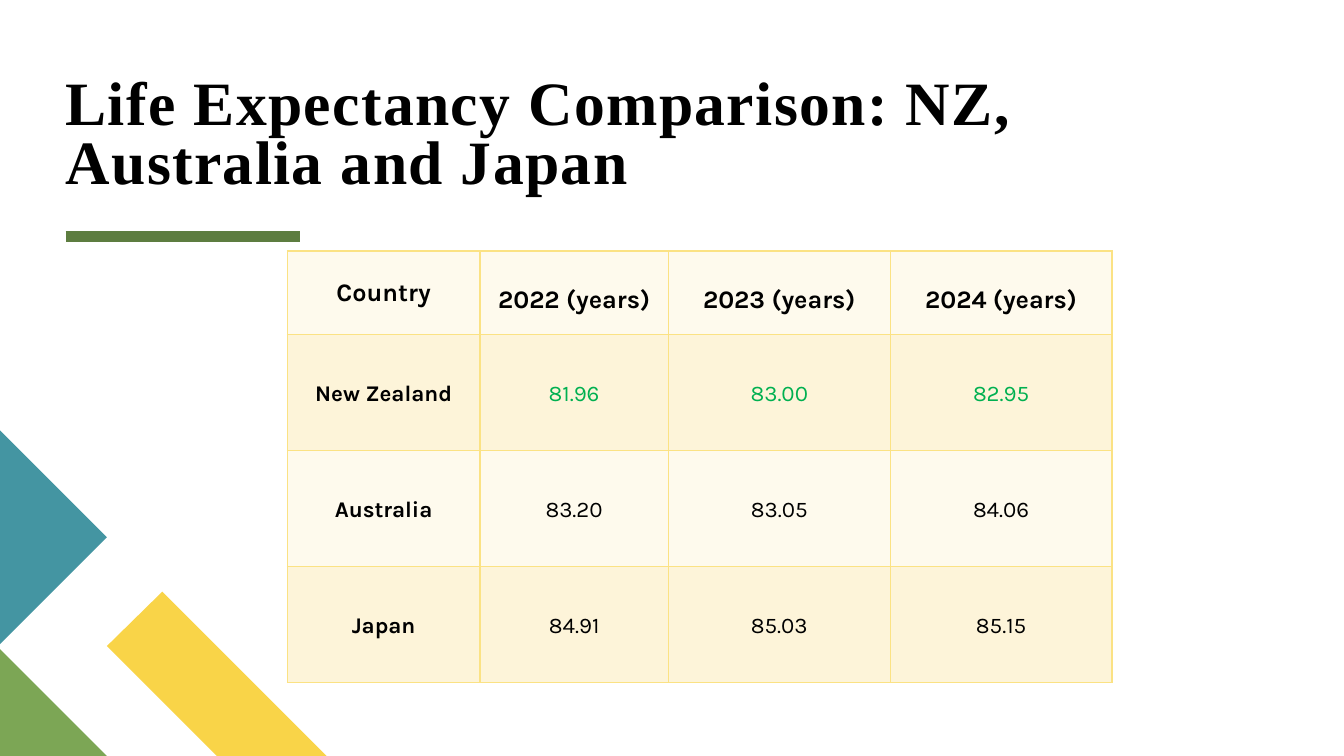
import pptx
import pptx.dml.color
import pptx.enum.shapes
import pptx.enum.text
import pptx.oxml
import pptx.oxml.ns
import pptx.util
from pptx.dml.color import RGBColor
from pptx.util import Inches

BLACK = RGBColor(0x00, 0x00, 0x00)
DARK_GREEN = RGBColor(0x5D, 0x7D, 0x40)
LEAF = RGBColor(0x7C, 0xA6, 0x55)
TEAL = RGBColor(0x44, 0x95, 0xA2)
YELLOW = RGBColor(0xF9, 0xD4, 0x48)
CREAM = RGBColor(0xFE, 0xFA, 0xED)
SAND = RGBColor(0xFD, 0xF4, 0xD9)
BORDER = RGBColor(0xFB, 0xE2, 0x84)
HIGHLIGHT = RGBColor(0x00, 0xB0, 0x50)

LIFE_EXPECTANCY = [
    ["Country", "2022 (years)", "2023 (years)", "2024 (years)"],
    ["New Zealand", "81.96", "83.00", "82.95"],
    ["Australia", "83.20", "83.05", "84.06"],
    ["Japan", "84.91", "85.03", "85.15"],
]
COLUMN_WIDTHS = [1.91, 1.87, 2.2, 2.2]
ROW_HEIGHTS = [0.83, 1.15, 1.15, 1.15]


class SlideBuilder:
    title_font = "Times New Roman"
    body_font = "Karla"

    def __init__(self, prs):
        self.s = prs.slides.add_slide(prs.slide_layouts[5])

    def title(self, text, left, top, width, height):
        sp = self.s.shapes.title
        sp.left, sp.top = Inches(left), Inches(top)
        sp.width, sp.height = Inches(width), Inches(height)
        tf = sp.text_frame
        tf.text = text
        tf.word_wrap = True
        tf.auto_size = pptx.enum.text.MSO_AUTO_SIZE.NONE
        tf.vertical_anchor = pptx.enum.text.MSO_ANCHOR.BOTTOM
        tf.margin_left = tf.margin_right = tf.margin_top = tf.margin_bottom = 0
        p = tf.paragraphs[0]
        p.alignment = pptx.enum.text.PP_ALIGN.LEFT
        p.line_spacing = 0.8
        self.font(p, self.title_font, 44, BLACK, True)
        p.runs[0].font._element.set("spc", "100")

    def font(self, p, name, size, color, bold):
        p.font.name = name
        p.font.size = pptx.util.Pt(size)
        p.font.color.rgb = color
        p.font.bold = bold

    def rule(self, x1, x2, y, color, weight):
        line = self.s.shapes.add_connector(
            pptx.enum.shapes.MSO_CONNECTOR.STRAIGHT,
            Inches(x1), Inches(y), Inches(x2), Inches(y))
        line.line.color.rgb = color
        line.line.width = pptx.util.Pt(weight)
        spPr = line._element.spPr
        spPr.append(pptx.oxml.parse_xml(
            f'<a:effectLst {pptx.oxml.ns.nsdecls("a")}/>'))

    def polygon(self, points, color):
        start, *rest = [(Inches(x), Inches(y)) for x, y in points]
        builder = self.s.shapes.build_freeform(*start)
        builder.add_line_segments(rest, close=True)
        sp = builder.convert_to_shape()
        sp.fill.solid()
        sp.fill.fore_color.rgb = color
        sp.line.fill.background()
        sp.shadow.inherit = False

    def table(self, rows, left, top, widths, heights):
        table = self.s.shapes.add_table(
            len(rows), len(widths), Inches(left), Inches(top),
            Inches(sum(widths)), Inches(sum(heights))).table
        table.first_row = table.horz_banding = False
        for column, width in zip(table.columns, widths):
            column.width = Inches(width)
        for row, height in zip(table.rows, heights):
            row.height = Inches(height)
        for i, row in enumerate(rows):
            for j, text in enumerate(row):
                self.cell(table.cell(i, j), text, i, j)

    def cell(self, cell, text, i, j):
        """Fill one cell; row 0 holds the years and column 0 the countries."""
        cell.fill.solid()
        cell.fill.fore_color.rgb = SAND if i % 2 else CREAM
        cell.text = text
        cell.vertical_anchor = pptx.enum.text.MSO_ANCHOR.MIDDLE
        p = cell.text_frame.paragraphs[0]
        p.alignment = pptx.enum.text.PP_ALIGN.CENTER
        color = HIGHLIGHT if i == 1 and j > 0 else BLACK
        self.font(p, self.body_font, 16 if i else 18, color, i == 0 or j == 0)
        if i:
            p.line_spacing = 1.15
            p.space_after = pptx.util.Pt(8)
            cell.margin_left = cell.margin_right = Inches(0.01)
            cell.margin_top = cell.margin_bottom = Inches(0.01)
        elif j:
            cell.vertical_anchor = pptx.enum.text.MSO_ANCHOR.TOP
            cell.margin_top = Inches(0.34)
        self.borders(cell)

    def borders(self, cell):
        tcPr = cell._tc.get_or_add_tcPr()
        for n, side in enumerate("LRTB"):
            tcPr.insert(n, pptx.oxml.parse_xml(
                f'<a:ln{side} {pptx.oxml.ns.nsdecls("a")} w="12700"><a:solidFill>'
                f'<a:srgbClr val="{BORDER}"/></a:solidFill></a:ln{side}>'))


def main():
    prs = pptx.Presentation()
    prs.slide_width, prs.slide_height = Inches(13.33), Inches(7.5)
    slide = SlideBuilder(prs)
    slide.rule(0.65, 2.98, 2.35, DARK_GREEN, 8)
    slide.polygon([(3.24, 7.5), (2.15, 7.5), (1.06, 6.41), (1.61, 5.87)], YELLOW)
    slide.polygon([(1.06, 7.5), (0, 7.5), (0, 6.44)], LEAF)
    slide.polygon([(0, 4.27), (1.06, 5.33), (0, 6.39)], TEAL)
    slide.title("Life Expectancy Comparison: NZ, Australia and Japan",
                0.65, 0.11, 11.89, 1.84)
    slide.table(LIFE_EXPECTANCY, 2.85, 2.49, COLUMN_WIDTHS, ROW_HEIGHTS)
    prs.save("out.pptx")


if __name__ == "__main__":
    main()
